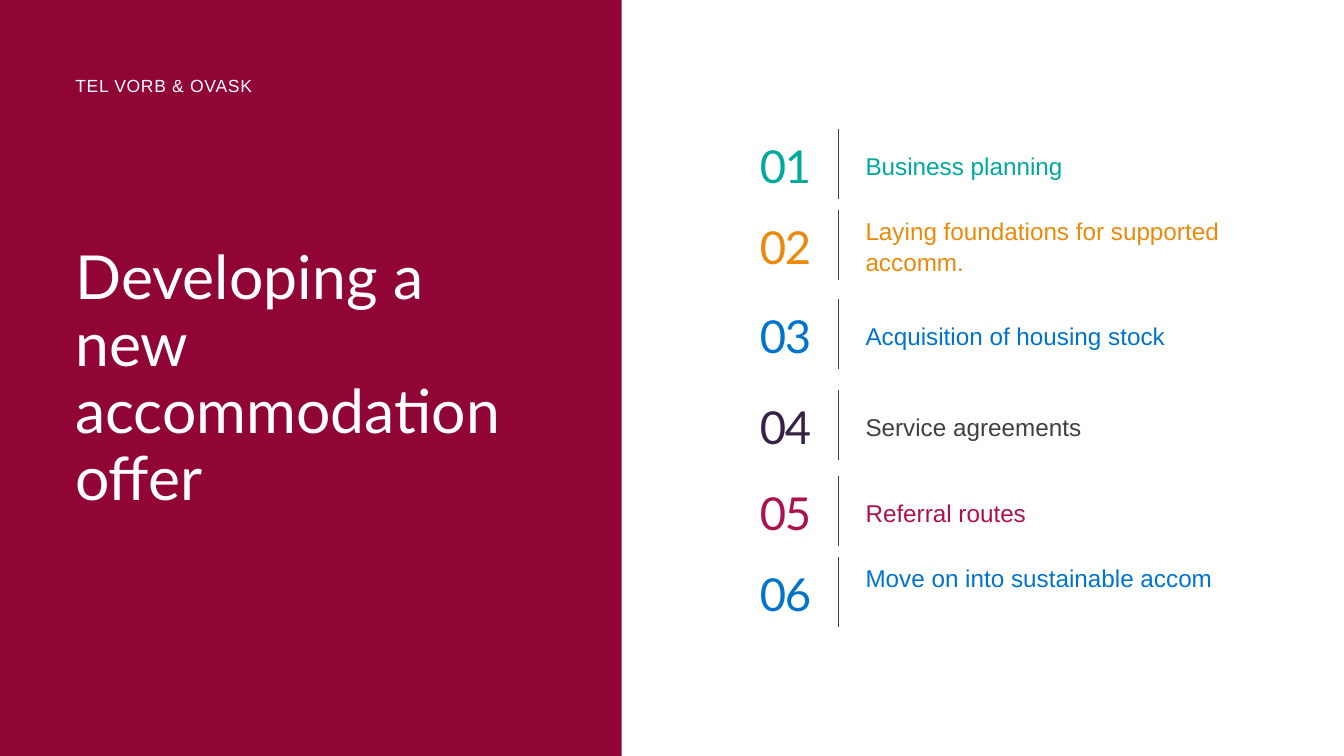
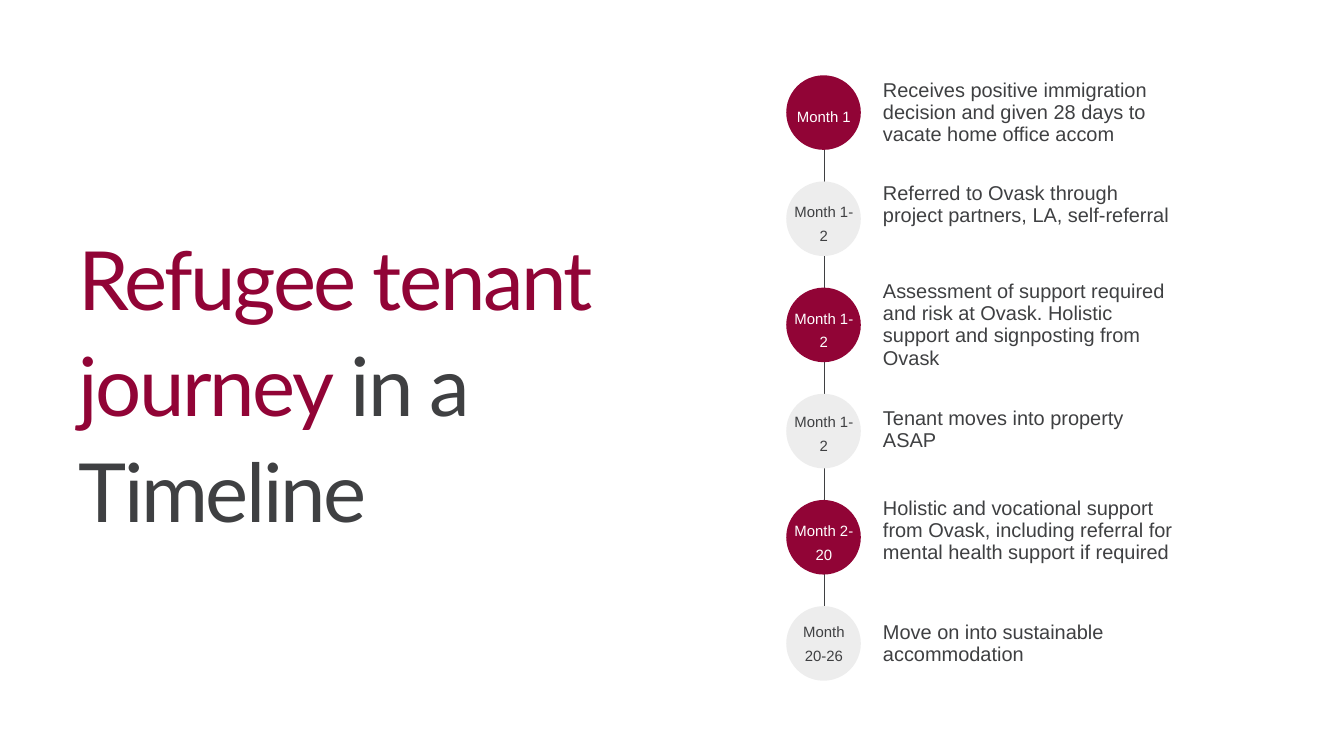
from lxml.etree import SubElement
from pptx import Presentation
from pptx.dml.color import RGBColor
from pptx.enum.shapes import MSO_CONNECTOR, MSO_SHAPE
from pptx.enum.text import MSO_ANCHOR, MSO_AUTO_SIZE, PP_ALIGN
from pptx.oxml.ns import qn
from pptx.util import Inches, Pt

CRIMSON, CHARCOAL, PALE, WHITE = "910436", "3F4042", "EDEDED", "FFFFFF"
TEAL, ORANGE, BLUE, PURPLE, RASPBERRY = "00A99D", "EA890A", "0074CD", "382047", "AC1250"

FRAME_FORMAT = {
    "margin_left": 0, "margin_right": 0, "margin_top": 0, "margin_bottom": 0,
    "word_wrap": True, "auto_size": MSO_AUTO_SIZE.NONE, "vertical_anchor": MSO_ANCHOR.TOP,
}

# Font, size, line spacing and letter spacing in points, alignment
STYLES = {
    "section title": ("Lato", 65, 71.5, 0, PP_ALIGN.LEFT),
    "timeline title": ("Lato", 87.4, 113.6, -2.6, PP_ALIGN.LEFT),
    "kicker": ("Arial", 18.8, 22.6, 0.7, PP_ALIGN.LEFT),
    "number": ("Lato", 48.6, 63.2, -1.4, PP_ALIGN.RIGHT),
    "topic": ("Arial", 26, 33.8, 0, PP_ALIGN.LEFT),
    "month": ("Arial", 16, 25.3, 0, PP_ALIGN.CENTER),
    "event": ("Arial", 21.4, 23.6, 0, PP_ALIGN.LEFT),
}

# Top of the row, topic, lines in the topic box, number colour, topic colour
TOPICS = [
    (1.92, "Business planning", 1, TEAL, TEAL),
    (3.12, "Laying foundations for supported accomm.", 2, ORANGE, ORANGE),
    (4.45, "Acquisition of housing stock", 1, BLUE, BLUE),
    (5.8, "Service agreements", 1, PURPLE, CHARCOAL),
    (7.08, "Referral routes", 1, RASPBERRY, RASPBERRY),
    (8.29, "Move on into sustainable accom", 2, BLUE, BLUE),
]

# Month and its top, event, its top and the lines in its box
EVENTS = [
    ("Month 1", 1.52,
     "Receives positive immigration decision and given 28 days to vacate home office accom",
     1.18, 3),
    ("Month 1-2", 2.93,
     "Referred to Ovask through project partners, LA, self-referral", 2.72, 3),
    ("Month 1-2", 4.52,
     "Assessment of support required and risk at Ovask. Holistic support and signposting from Ovask",
     4.18, 4),
    ("Month 1-2", 6.06, "Tenant moves into property ASAP", 6.06, 2),
    ("Month 2-20", 7.68,
     "Holistic and vocational support from Ovask, including referral for mental health support if required",
     7.4, 4),
    ("Month 20-26", 9.18, "Move on into sustainable accommodation", 9.25, 2),
]


def color(hex_string):
    return RGBColor.from_string(hex_string)


def write_text(shape, style, *runs):
    """Fill the shape with one paragraph made of (text, colour) runs."""
    font_name, size, line_spacing, letter_spacing, alignment = STYLES[style]
    frame = shape.text_frame
    for name, value in FRAME_FORMAT.items():
        setattr(frame, name, value)
    paragraph = frame.paragraphs[0]
    paragraph.alignment = alignment
    paragraph.line_spacing = Pt(line_spacing)
    for text, hex_string in runs:
        run = paragraph.add_run()
        run.text = text
        for name, value in {"name": font_name, "size": Pt(size), "bold": False}.items():
            setattr(run.font, name, value)
        run.font.color.rgb = color(hex_string)
        if letter_spacing:
            run._r.get_or_add_rPr().set("spc", str(round(letter_spacing * 100)))


def add_text(shapes, box, style, text, hex_string):
    textbox = shapes.add_textbox(*map(Inches, box))
    write_text(textbox, style, (text, hex_string))


def add_filled_shape(shapes, preset, box, hex_string):
    shape = shapes.add_shape(preset, *map(Inches, box))
    shape.shadow.inherit = False
    shape.fill.solid()
    shape.fill.fore_color.rgb = color(hex_string)
    shape.line.fill.background()
    return shape


def add_vertical_rule(shapes, x, top, height):
    rule = shapes.add_connector(
        MSO_CONNECTOR.STRAIGHT, *map(Inches, (x, top, x, top + height)))
    rule.line.width = Pt(0.75)
    rule.line.color.rgb = color(CHARCOAL)
    SubElement(rule._element.spPr, qn("a:effectLst"))


def set_title(slide, box, style, *runs):
    title = slide.shapes.title
    for name, value in zip(("left", "top", "width", "height"), box):
        setattr(title, name, Inches(value))
    write_text(title, style, *runs)
    return title


def add_topic(slide, number, top, topic, lines, number_color, topic_color):
    shapes = slide.shapes.add_group_shape().shapes
    add_vertical_rule(shapes, 12.48, top, 1.04)
    height = 0.47 * lines
    topic_top = top + 0.53 - height / 2
    add_text(shapes, (12.88, topic_top, 5.37, height), "topic", topic, topic_color)
    add_text(shapes, (11.29, top + 0.07, 0.78, 0.86), "number", f"{number:02}", number_color)


def add_event(slide, index, month, month_top, event, event_top, lines):
    fill, month_color = ((CRIMSON, WHITE), (PALE, CHARCOAL))[index % 2]
    shapes = slide.shapes.add_group_shape().shapes
    circle_box = (11.7, 1.12 + 1.58 * index, 1.11, 1.11)
    add_filled_shape(shapes, MSO_SHAPE.OVAL, circle_box, fill)
    month_height = 0.31 if month == "Month 1" else 0.67
    add_text(shapes, (11.82, month_top, 0.88, month_height), "month", month, month_color)
    add_text(shapes, (13.14, event_top, 4.4, 0.34 * lines), "event", event, CHARCOAL)


def build_topics_slide(slide):
    title = set_title(slide, (1.12, 3.65, 7.01, 4.01), "section title",
                      ("Developing a new accommodation offer", WHITE))
    panel = add_filled_shape(slide.shapes, MSO_SHAPE.RECTANGLE, (0, 0, 9.25, 11.25), CRIMSON)
    title.element.addprevious(panel.element)  # keeps the panel behind the title
    add_text(slide.shapes, (1.12, 1.12, 4.38, 0.31), "kicker", "TEL VORB & OVASK", WHITE)
    for number, topic in enumerate(TOPICS, start=1):
        add_topic(slide, number, *topic)


def build_timeline_slide(slide):
    set_title(slide, (1.17, 3.28, 7.8, 4.74), "timeline title",
              ("Refugee tenant journey ", CRIMSON), ("in a Timeline", CHARCOAL))
    add_vertical_rule(slide.shapes, 12.26, 1.68, 7.89)
    for index, event in enumerate(EVENTS):
        add_event(slide, index, *event)


def main():
    presentation = Presentation()
    presentation.slide_width = Inches(20)
    presentation.slide_height = Inches(11.25)
    title_only = presentation.slide_layouts.get_by_name("Title Only")
    for build_slide in (build_topics_slide, build_timeline_slide):
        build_slide(presentation.slides.add_slide(title_only))
    presentation.save("out.pptx")


if __name__ == "__main__":
    main()
